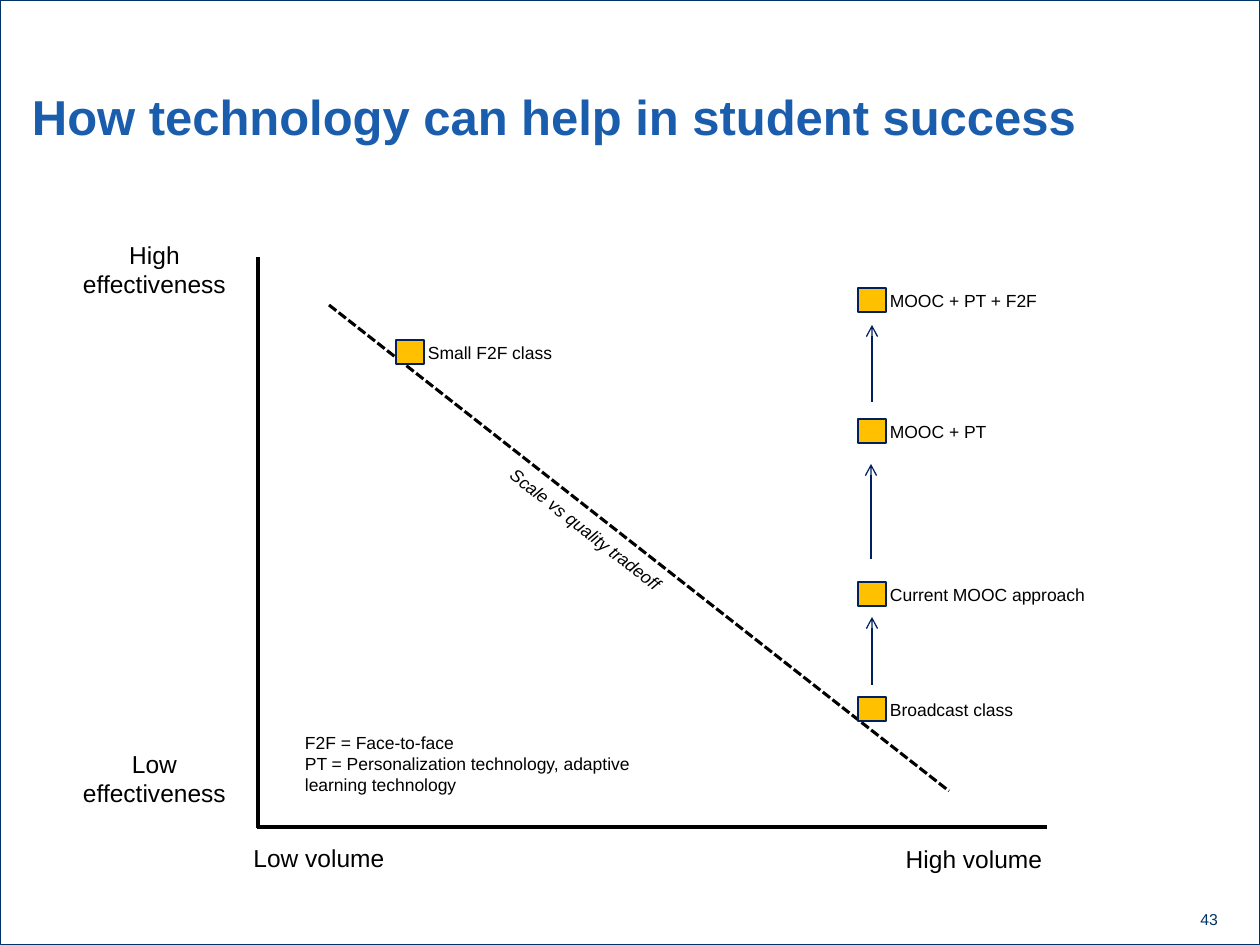
from lxml.etree import SubElement
from pptx import Presentation
from pptx.dml.color import RGBColor
from pptx.enum.dml import MSO_LINE
from pptx.enum.shapes import MSO_CONNECTOR, MSO_SHAPE
from pptx.enum.text import MSO_ANCHOR, MSO_AUTO_SIZE, PP_ALIGN
from pptx.oxml.ns import qn
from pptx.util import Pt

SCALE = 914400 / 126  # EMU per px
COLORS = {
    "ink": "000000",
    "title": "1B5DAD",
    "frame": "003366",
    "edge": "002060",
    "mark": "FFC000",
}
MARK_W, MARK_H = 28, 24
MOOC_X = 858
LABEL_H = 34


def px(*values):
    return [round(v * SCALE) for v in values]


def color(name):
    return RGBColor.from_string(COLORS[name])


def write(shape, text, size=10, ink="ink", bold=False, italic=False,
          align=PP_ALIGN.LEFT, anchor=MSO_ANCHOR.TOP, wrap=True, pad=(13, 6)):
    """Fill a shape with text, one paragraph per line; pad is (side, top) in px."""
    frame = shape.text_frame
    frame.text = text
    frame.word_wrap = wrap
    frame.auto_size = MSO_AUTO_SIZE.NONE
    frame.vertical_anchor = anchor
    side, top = px(*pad)
    frame.margin_left = frame.margin_right = side
    frame.margin_top = frame.margin_bottom = top
    for para in frame.paragraphs:
        para.alignment = align
        font = para.font
        font.name, font.size = "Arial", Pt(size)
        font.bold, font.italic = bold, italic
        font.color.rgb = color(ink)


def add_text(slide, box, text, **style):
    shape = slide.shapes.add_textbox(*px(*box))
    write(shape, text, **style)
    return shape


def add_rect(slide, box, edge, width, fill=None):
    rect = slide.shapes.add_shape(MSO_SHAPE.RECTANGLE, *px(*box))
    rect.shadow.inherit = False
    rect.line.color.rgb = color(edge)
    rect.line.width = Pt(width)
    if fill:
        rect.fill.solid()
        rect.fill.fore_color.rgb = color(fill)
    else:
        rect.fill.background()


def add_line(slide, start, end, ink="ink", width=2, dash=None, arrow=False):
    line = slide.shapes.add_connector(MSO_CONNECTOR.STRAIGHT, *px(*start, *end))
    line.line.color.rgb = color(ink)
    line.line.width = Pt(width)
    if dash:
        line.line.dash_style = dash
    if arrow:
        SubElement(line.line._get_or_add_ln(), qn("a:tailEnd"), type="arrow")
    SubElement(line._element.spPr, qn("a:effectLst"))


def add_mark(slide, x, y, label, width):
    add_rect(slide, (x, y, MARK_W, MARK_H), "edge", 0.75, "mark")
    add_text(slide, (x + 19, y - 4, width, LABEL_H), label, wrap=False)


def add_title(slide, text):
    title = slide.shapes.title
    title.left, title.top, title.width, title.height = px(32, 79, 1197, 73)
    write(title, text, size=28, ink="title", bold=True,
          anchor=MSO_ANCHOR.MIDDLE, pad=(0, 6))


def add_axes(slide):
    add_line(slide, (258, 257), (258, 828))
    add_line(slide, (1047, 827), (257, 827))
    for x, y, width, text in (
        (67, 234, 175, "High effectiveness"),
        (67, 743, 175, "Low effectiveness"),
        (222, 837, 194, "Low volume"),
        (877, 838, 194, "High volume"),
    ):
        add_text(slide, (x, y, width, 71), text, size=14, align=PP_ALIGN.CENTER)


def main():
    deck = Presentation()
    deck.slide_width, deck.slide_height = px(1260, 945)
    slide = deck.slides.add_slide(deck.slide_layouts[5])

    add_rect(slide, (0, 0, 1260, 945), "frame", 0.5)
    add_title(slide, "How technology can help in student success")
    add_text(slide, (1092, 910, 139, 35), "43", size=9, ink="frame",
             align=PP_ALIGN.RIGHT, wrap=False, pad=(13, 0))
    add_axes(slide)

    add_line(slide, (329, 305), (949, 791), width=1.75, dash=MSO_LINE.SQUARE_DOT)
    add_mark(slide, 396, 340, "Small F2F class", 151)
    for y, label, width in (
        (697, "Broadcast class", 150),
        (582, "Current MOOC approach", 222),
        (419, "MOOC + PT", 123),
        (288, "MOOC + PT + F2F", 175),
    ):
        add_mark(slide, MOOC_X, y, label, width)
    for x, low, high in ((872, 685, 617), (871, 559, 464), (872, 402, 325)):
        add_line(slide, (x, low), (x, high), "edge", 0.75, arrow=True)

    note = add_text(slide, (480, 513, 212, LABEL_H), "Scale vs quality tradeoff",
                    italic=True, wrap=False)
    note.rotation = 38
    add_text(slide, (292, 726, 367, 97),
             "F2F = Face-to-face\n"
             "PT = Personalization technology, adaptive learning technology")

    deck.save("out.pptx")


if __name__ == "__main__":
    main()
